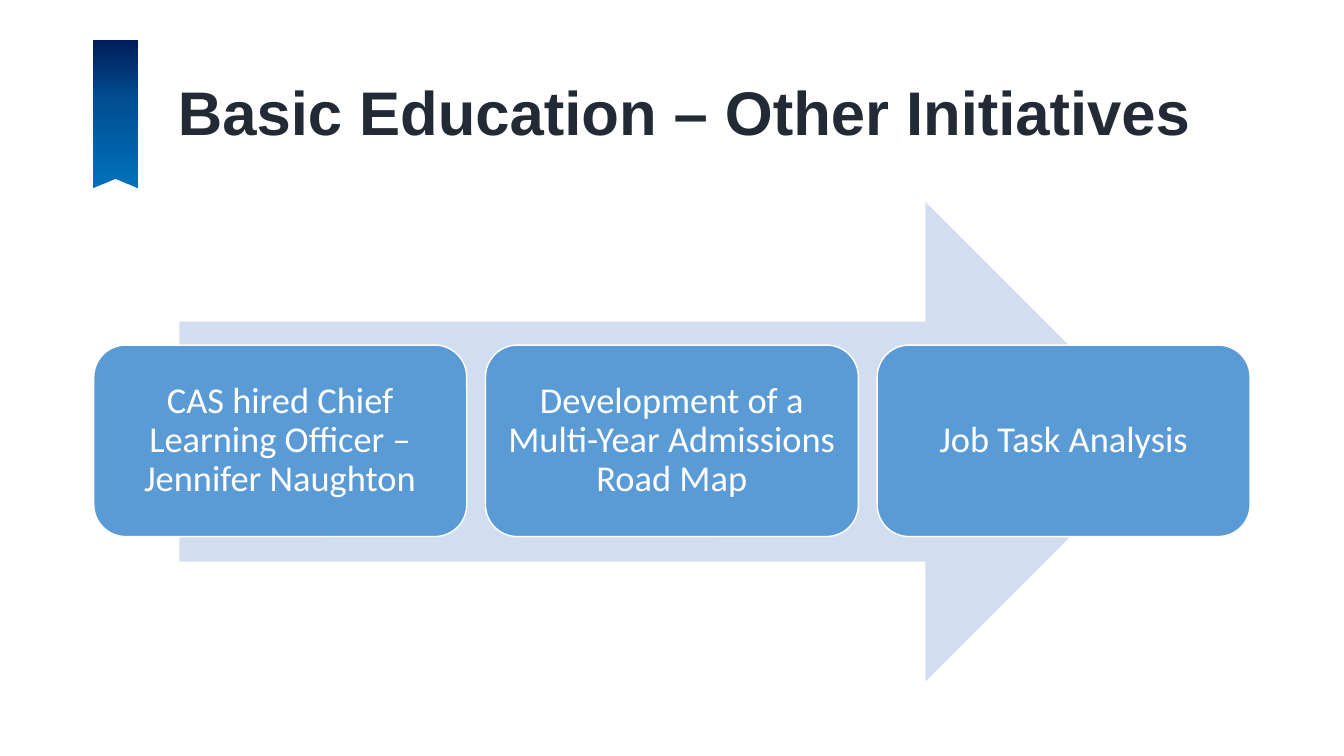
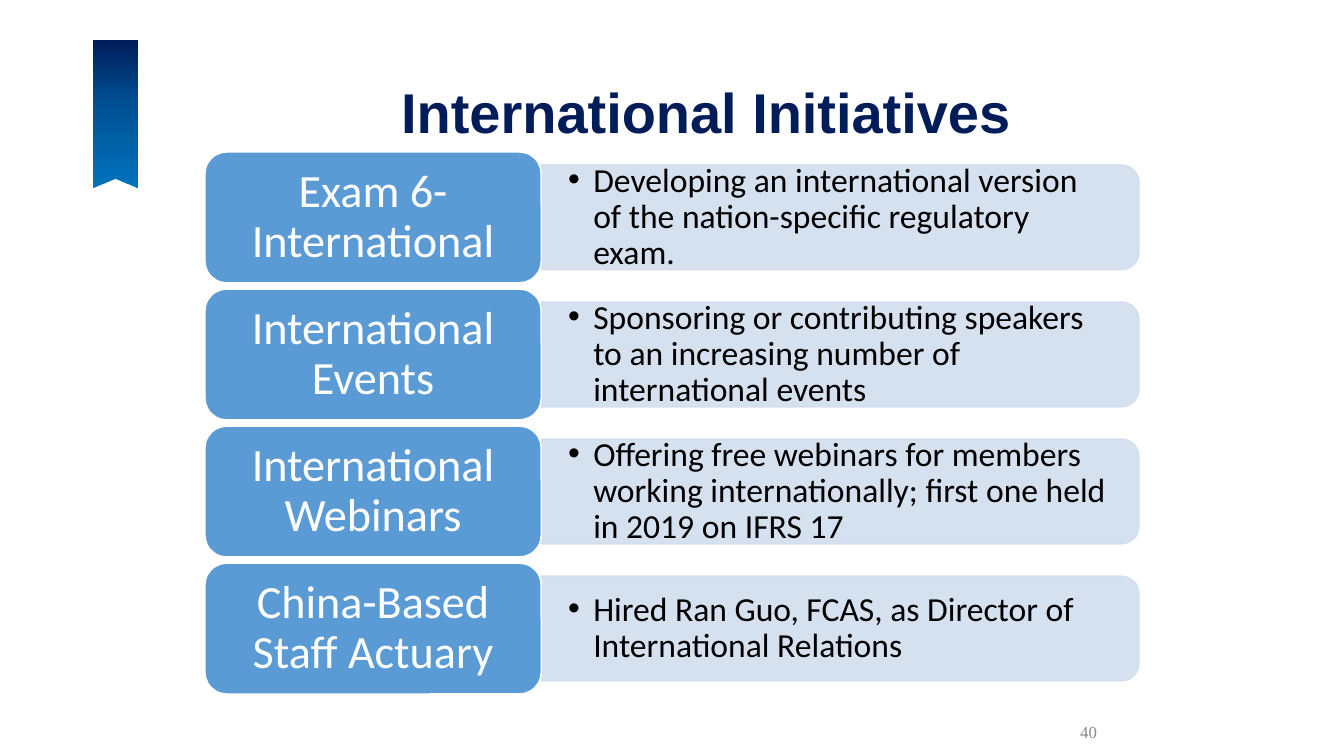
"""Build two slides on education and international initiatives."""
from lxml import etree
from pptx import Presentation
from pptx.dml.color import RGBColor
from pptx.enum.shapes import MSO_SHAPE
from pptx.enum.text import MSO_ANCHOR, PP_ALIGN
from pptx.oxml.ns import qn
from pptx.util import Pt

ROUND = MSO_SHAPE.ROUNDED_RECTANGLE
TAB = MSO_SHAPE.ROUND_2_SAME_RECTANGLE
ARROW = MSO_SHAPE.RIGHT_ARROW
MIDDLE = MSO_ANCHOR.MIDDLE
LEFT, MID, RIGHT = PP_ALIGN.LEFT, PP_ALIGN.CENTER, PP_ALIGN.RIGHT

COLORS = {
    "navy": "001C59", "ocean": "005093", "sky": "0072BC", "slate": "222A35",
    "blue": "5B9BD5", "pale": "D2DEEF", "white": "FFFFFF", "black": "000000",
    "gray": "898989",
}
STYLES = {
    "title": {"name": "Arial", "bold": True},
    "card": {"name": "Calibri", "size": Pt(26)},
    "label": {"name": "Calibri", "size": Pt(33)},
    "point": {"name": "Calibri", "size": Pt(24)},
    "number": {"name": "Times New Roman", "size": Pt(12)},
}


def draw(slide, kind, box, fill, line=None):
    shape = slide.shapes.add_shape(kind, *[Pt(v) for v in box])
    shape.shadow.inherit = False
    shape.fill.solid()
    shape.fill.fore_color.rgb = RGBColor.from_string(COLORS[fill])
    if line:
        shape.line.color.rgb = RGBColor.from_string(COLORS[line])
        shape.line.width = Pt(1)
    else:
        shape.line.fill.background()
    return shape


def write(shape, text, style, color, align=LEFT, pad=(7.2, 3.6), space=0.9):
    frame = shape.text_frame
    frame.word_wrap = True
    frame.vertical_anchor = MIDDLE
    frame.margin_left = frame.margin_right = Pt(pad[0])
    frame.margin_top = frame.margin_bottom = Pt(pad[1])
    para = frame.paragraphs[0]
    para.alignment = align
    para.line_spacing = space
    run = para.add_run()
    run.text = text
    for key, value in STYLES[style].items():
        setattr(run.font, key, value)
    run.font.color.rgb = RGBColor.from_string(COLORS[color])
    return para


deck = Presentation()
deck.slide_width, deck.slide_height = Pt(960), Pt(540)

TITLES = [
    ("Basic Education – Other Initiatives", 120, 774, 44, "slate"),
    ("International Initiatives", 279.5, 534, 40, "navy"),
]
RIBBON = [(98.7, 134.6), (82.6, 127.6), (66.2, 134.6), (66.2, 28.8)]
STOPS = [(0, "sky"), (58, "ocean"), (100, "navy")]
slides = []
for text, left, width, size, color in TITLES:
    slide = deck.slides.add_slide(deck.slide_layouts[6])
    slides.append(slide)
    pen = slide.shapes.build_freeform(Pt(98.7), Pt(28.8))
    pen.add_line_segments([(Pt(x), Pt(y)) for x, y in RIBBON])
    ribbon = pen.convert_to_shape()
    ribbon.shadow.inherit = False
    ribbon.line.fill.background()
    ribbon.fill.gradient()
    ribbon.fill.gradient_angle = 90
    ramp = next(ribbon.element.iter(qn("a:gsLst")))
    ramp.clear()
    for place, shade in STOPS:
        stop = etree.SubElement(ramp, qn("a:gs"), pos=str(place * 1000))
        etree.SubElement(stop, qn("a:srgbClr"), val=COLORS[shade])
    title = slide.shapes.add_textbox(Pt(left), Pt(30), Pt(width), Pt(104.4))
    para = write(title, text, "title", color)
    para.runs[0].font.size = Pt(size)

first, second = slides

CARDS = [
    "CAS hired Chief Learning Officer – Jennifer Naughton",
    "Development of a Multi-Year Admissions Road Map",
    "Job Task Analysis",
]
draw(first, ARROW, (128.2, 144, 704.2, 342.9), "pale")
for i, text in enumerate(CARDS):
    card = draw(first, ROUND, (67 + i * 279.8, 246.5, 266.4, 136.8), "blue", "white")
    write(card, text, "card", "white", MID, (8, 8))

ROWS = [
    ("Exam 6-International",
     "Developing an international version of the nation-specific regulatory exam."),
    ("International Events",
     "Sponsoring or contributing speakers to an increasing number of international events"),
    ("International Webinars",
     "Offering free webinars for members working internationally; first one held in 2019 on IFRS 17"),
    ("China-Based Staff Actuary",
     "Hired Ran Guo, FCAS, as Director of International Relations"),
]
EDGE, LABEL, HIGH = 146.4, 240.2, 93.4
BAR, THICK = 427, 74.9
for i, (name, text) in enumerate(ROWS):
    top = 108.6 + i * 97.9
    mid = top + HIGH / 2
    start = EDGE + LABEL
    box = (start + (BAR - THICK) / 2, mid - BAR / 2, THICK, BAR)
    bar = draw(second, TAB, box, "pale", "pale")
    bar.rotation = 90
    for tint in bar.element.spPr.iter(qn("a:srgbClr")):
        etree.SubElement(tint, qn("a:alpha"), val="90000")
    note = second.shapes.add_textbox(Pt(start), Pt(mid - 33.5), Pt(423.4), Pt(67))
    para = write(note, text, "point", "black", LEFT, (19.2, 9.6))
    props = para._p.get_or_add_pPr()
    props.set("marL", str(Pt(18)))
    props.set("indent", str(Pt(-18)))
    etree.SubElement(props, qn("a:buFont"), typeface="Arial")
    etree.SubElement(props, qn("a:buChar"), char="•")
    label = draw(second, ROUND, (EDGE, top, LABEL, HIGH), "blue", "white")
    write(label, name, "label", "white", MID, (9.9, 5))

number = second.shapes.add_textbox(Pt(628.6), Pt(516.2), Pt(162), Pt(13))
write(number, "40", "number", "gray", RIGHT, (7.2, 0), 1.0)

deck.save("out.pptx")
